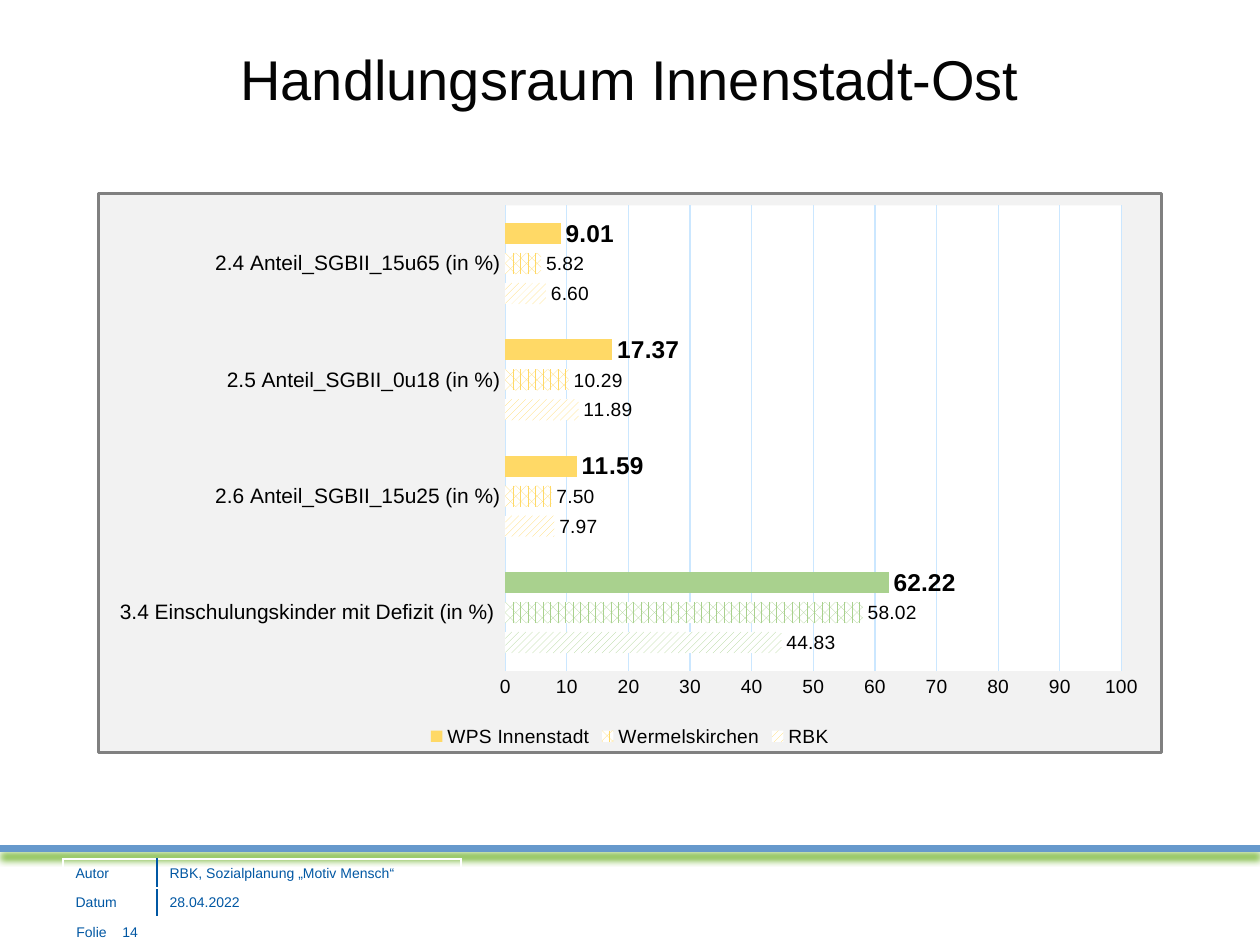
from dataclasses import dataclass
from lxml.etree import SubElement
from pptx import Presentation
from pptx.chart.data import CategoryChartData
from pptx.dml.color import RGBColor
from pptx.enum.chart import XL_CHART_TYPE, XL_LABEL_POSITION, XL_LEGEND_POSITION, XL_TICK_MARK
from pptx.enum.dml import MSO_PATTERN
from pptx.enum.shapes import MSO_CONNECTOR
from pptx.enum.text import MSO_ANCHOR, PP_ALIGN
from pptx.oxml import parse_xml
from pptx.oxml.ns import nsdecls, qn
from pptx.util import Emu, Pt


@dataclass(frozen=True)
class Theme:
    font: str = "Arial"
    title: str = "040404"
    text: str = "000000"
    footer: str = "0057A3"
    bar: str = "6699CC"
    shadow: str = "6AB023"
    grid: str = "CBE7FF"
    frame: str = "808080"
    panel: str = "F2F2F2"
    plot: str = "FFFFFF"
    yellow: str = "FFD966"
    green: str = "A9D18E"
    title_size: int = 32
    footer_size: int = 8
    axis_size: int = 11
    category_size: int = 12
    strong_size: int = 14


T = Theme()


def px(*values):
    return [Emu(round(v * 914400 / 126)) for v in values]


def style(font, size, color, bold=False):
    font.name = T.font
    font.size = Pt(size)
    font.bold = bold
    font.color.rgb = RGBColor.from_string(color)


prs = Presentation()
prs.slide_width, prs.slide_height = px(1260, 945)
s = prs.slides.add_slide(prs.slide_layouts[5])

title = s.shapes.title
title.left, title.top, title.width, title.height = px(63, 38, 1134, 97)
tf = title.text_frame
tf.text = "Handlungsraum Innenstadt-Ost"
tf.vertical_anchor = MSO_ANCHOR.TOP
p = tf.paragraphs[0]
p.alignment = PP_ALIGN.CENTER
style(p.runs[0].font, T.title_size, T.title)

line = s.shapes.add_connector(MSO_CONNECTOR.STRAIGHT, *px(0, 849, 1260, 849))
line.line.color.rgb = RGBColor.from_string(T.bar)
line.line.width = Pt(4)
line._element.spPr.append(parse_xml(
    f'<a:effectLst {nsdecls("a")}><a:outerShdw blurRad="{Pt(4)}" dist="{Pt(4)}" dir="5400000" '
    f'algn="t" rotWithShape="0"><a:srgbClr val="{T.shadow}"/></a:outerShdw></a:effectLst>'))

rows = [("Autor", "RBK, Sozialplanung „Motiv Mensch“"), ("Datum", "28.04.2022")]
table = s.shapes.add_table(2, 2, *px(63, 859, 398, 58)).table
table.first_row = table.horz_banding = False
table.columns[0].width, table.columns[1].width = px(94, 304)
for i, row in enumerate(rows):
    for j, text in enumerate(row):
        cell = table.cell(i, j)
        cell.text = text
        cell.vertical_anchor = MSO_ANCHOR.BOTTOM
        cell.fill.background()
        style(cell.text_frame.paragraphs[0].runs[0].font, T.footer_size, T.footer)
        side = ("lnR", "lnL")[j]
        cell._tc.get_or_add_tcPr().insert(0, parse_xml(
            f'<a:{side} {nsdecls("a")} w="{Pt(1)}"><a:solidFill>'
            f'<a:srgbClr val="{T.footer}"/></a:solidFill></a:{side}>'))

page = s.shapes.add_textbox(*px(64, 907, 149, 50))
tf = page.text_frame
tf.word_wrap = True
tf.vertical_anchor = MSO_ANCHOR.MIDDLE
p = tf.paragraphs[0]
p.text = "Folie\t14"
p._p.get_or_add_pPr().append(parse_xml(
    f'<a:tabLst {nsdecls("a")}><a:tab pos="{px(46)[0]}" algn="l"/></a:tabLst>'))
for r in p.runs:
    style(r.font, T.footer_size, T.footer)

data = CategoryChartData(number_format="0.00")
data.categories = [
    "3.4 Einschulungskinder mit Defizit (in %) ",
    "2.6 Anteil_SGBII_15u25 (in %)",
    "2.5 Anteil_SGBII_0u18 (in %)",
    "2.4 Anteil_SGBII_15u65 (in %)",
]
data.add_series("RBK", (44.83, 7.97, 11.89, 6.6))
data.add_series("Wermelskirchen", (58.02, 7.5, 10.29, 5.82))
data.add_series("WPS Innenstadt", (62.22, 11.59, 17.37, 9.01))
chart = s.shapes.add_chart(XL_CHART_TYPE.BAR_CLUSTERED, *px(97, 192, 1066, 562), data).chart
style(chart.font, 10, T.footer)
chart.has_title = False
chart.has_legend = True
chart.legend.position = XL_LEGEND_POSITION.BOTTOM
chart.legend.include_in_layout = False
style(chart.legend.font, T.axis_size, T.text)

cat = chart.category_axis
cat.major_tick_mark = XL_TICK_MARK.NONE
cat.format.line.color.rgb = RGBColor.from_string(T.grid)
cat.format.line.width = Pt(0.75)
style(cat.tick_labels.font, T.category_size, T.text)

val = chart.value_axis
val.minimum_scale, val.maximum_scale, val.major_unit = 0, 100, 10
val.major_tick_mark = XL_TICK_MARK.NONE
val.format.line.fill.background()
val.major_gridlines.format.line.color.rgb = RGBColor.from_string(T.grid)
val.major_gridlines.format.line.width = Pt(0.75)
val.tick_labels.number_format = "0"
val.tick_labels.number_format_is_linked = False
style(val.tick_labels.font, T.axis_size, T.text)

plot = chart.plots[0]
plot.gap_width = 168
plot.overlap = -42
plot.vary_by_categories = False
patterns = [MSO_PATTERN.WIDE_UPWARD_DIAGONAL, MSO_PATTERN.PERCENT_60, None]
for series, pattern in zip(plot.series, patterns):
    for fmt, color in ((series.format, T.yellow), (series.points[0].format, T.green)):
        if pattern:
            fmt.fill.patterned()
            fmt.fill.pattern = pattern
            fmt.fill.back_color.rgb = RGBColor.from_string(T.plot)
        else:
            fmt.fill.solid()
        fmt.fill.fore_color.rgb = RGBColor.from_string(color)
    labels = series.data_labels
    labels.show_value = True
    labels.position = XL_LABEL_POSITION.OUTSIDE_END
    labels.number_format = "0.00"
    labels.number_format_is_linked = False
    style(labels.font, T.axis_size if pattern else T.strong_size, T.text, not pattern)

area = chart.element.find(qn("c:chart")).find(qn("c:plotArea"))
for old in area.findall(qn("c:layout")):
    area.remove(old)
layout = parse_xml(f'<c:layout {nsdecls("c")}/>')
manual = SubElement(layout, qn("c:manualLayout"))
for tag, value in (("layoutTarget", "inner"), ("xMode", "edge"), ("yMode", "edge"),
                   ("x", 408 / 1066), ("y", 12 / 562), ("w", 618 / 1066), ("h", 468 / 562)):
    SubElement(manual, qn(f"c:{tag}")).set("val", str(value))
area.insert(0, layout)
panels = [(area.append, T.plot, "<a:ln><a:noFill/></a:ln>"),
          (chart.element.find(qn("c:chart")).addnext, T.panel,
           f'<a:ln w="{Pt(1.75)}"><a:solidFill><a:srgbClr val="{T.frame}"/></a:solidFill></a:ln>')]
for place, color, border in panels:
    place(parse_xml(f'<c:spPr {nsdecls("c", "a")}><a:solidFill><a:srgbClr val="{color}"/>'
                    f'</a:solidFill>{border}</c:spPr>'))

prs.save("out.pptx")
